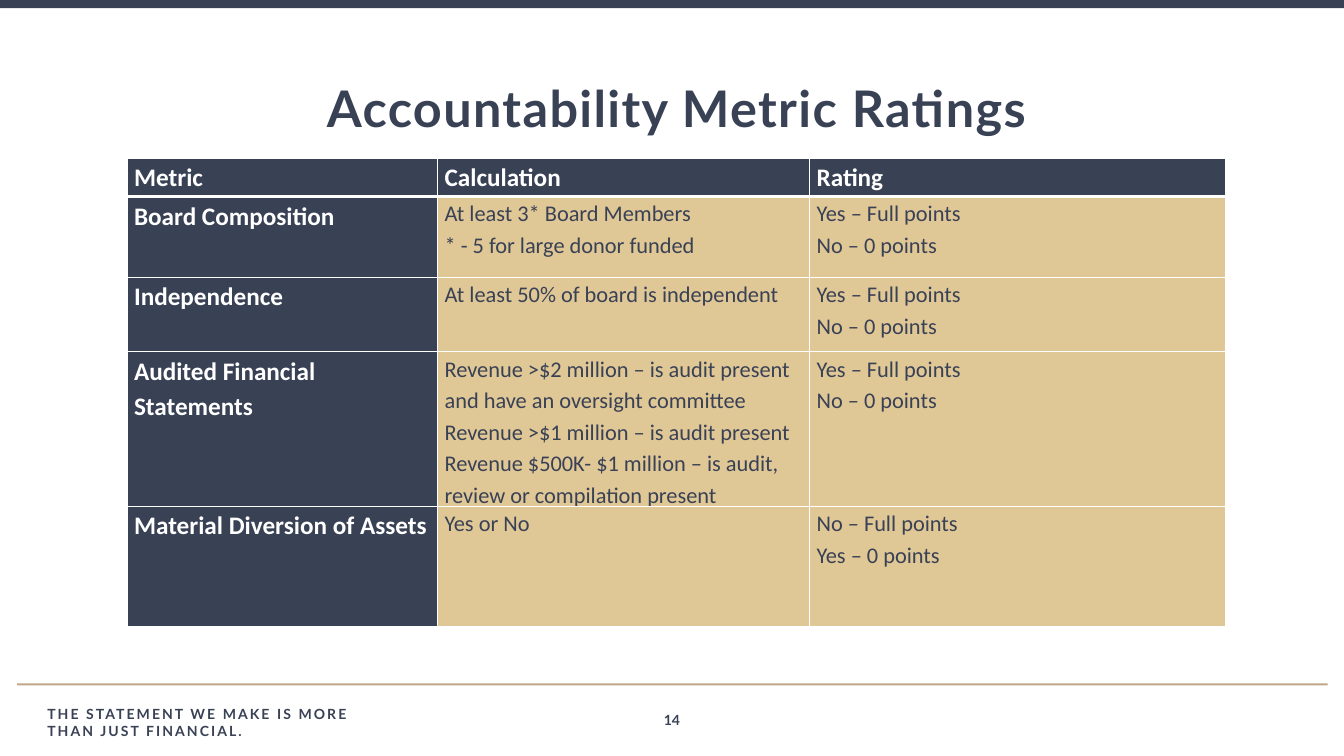
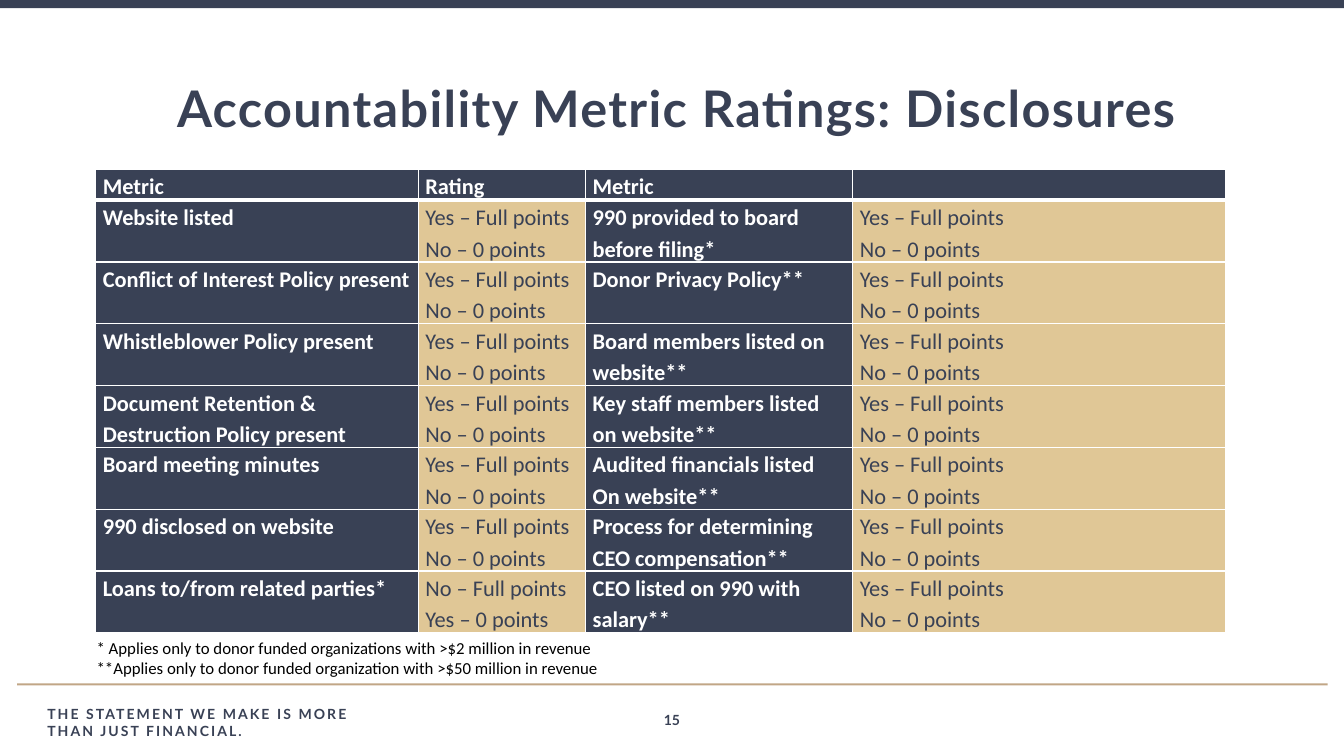
"""Build two slides on accountability metric ratings."""
from pptx import Presentation
from pptx.dml.color import RGBColor
from pptx.enum.shapes import MSO_SHAPE
from pptx.enum.text import MSO_ANCHOR, PP_ALIGN
from pptx.oxml.ns import qn
from pptx.util import Inches, Pt
from lxml.etree import SubElement

NAVY = RGBColor(0x39, 0x41, 0x55)
SAND = RGBColor(0xE0, 0xC7, 0x96)
TAN = RGBColor(0xC1, 0xA6, 0x86)
WHITE = RGBColor(0xFF, 0xFF, 0xFF)
BLACK = RGBColor(0, 0, 0)
HEAD_FONT, BODY_FONT = "Lato", "Calibri"
SLIDE_W, SLIDE_H = Inches(13.33), Inches(7.5)

FOOTER = "THE STATEMENT WE MAKE IS MORE\nTHAN JUST FINANCIAL."
YES_FULL = "Yes – Full points\nNo – 0 points"
NO_FULL = "No – Full points\nYes – 0 points"

RATINGS = [
    ("Metric", "Calculation", "Rating"),
    ("Board Composition",
     "At least 3* Board Members\n* - 5 for large donor funded", YES_FULL),
    ("Independence", "At least 50% of board is independent", YES_FULL),
    ("Audited Financial Statements",
     "Revenue >$2 million – is audit present and have an oversight committee\n"
     "Revenue >$1 million – is audit present\n"
     "Revenue $500K- $1 million – is audit, review or compilation present",
     YES_FULL),
    ("Material Diversion of Assets", "Yes or No", NO_FULL),
]
DISCLOSURES = [
    ("Metric", "Rating", "Metric", ""),
    ("Website listed", YES_FULL, "990 provided to board before filing*", YES_FULL),
    ("Conflict of Interest Policy present", YES_FULL,
     "Donor Privacy Policy**", YES_FULL),
    ("Whistleblower Policy present", YES_FULL,
     "Board members listed on website**", YES_FULL),
    ("Document Retention & Destruction Policy present", YES_FULL,
     "Key staff members listed on website**", YES_FULL),
    ("Board meeting minutes", YES_FULL,
     "Audited financials listed On website**", YES_FULL),
    ("990 disclosed on website", YES_FULL,
     "Process for determining CEO compensation**", YES_FULL),
    ("Loans to/from related parties*", NO_FULL,
     "CEO listed on 990 with salary**", YES_FULL),
]
FOOTNOTES = ("* Applies only to donor funded organizations with >$2 million in revenue\n"
             "**Applies only to donor funded organization with >$50 million in revenue")


def across(percent):
    """Return a percentage of the slide width."""
    return round(SLIDE_W * percent / 100)


def down(percent):
    """Return a percentage of the slide height."""
    return round(SLIDE_H * percent / 100)


def box(left, top, width, height):
    """Turn percentages of the slide into a frame."""
    return across(left), down(top), across(width), down(height)


def write(tf, text, size, color, font, bold=True, align=None, line=None, track=0):
    """Fill a text frame and format every run alike."""
    tf.text = text
    for p in tf.paragraphs:
        p.alignment = align
        p.line_spacing = line
        for r in p.runs:
            r.font.size, r.font.bold, r.font.name = Pt(size), bold, font
            r.font.color.rgb = color
            if track:
                r.font._element.set("spc", str(round(track * 100)))
        if not p.runs:
            p._p.get_or_add_endParaRPr().set("sz", str(size * 100))


def add_band(slide, frame, color):
    """Add a plain filled bar."""
    sp = slide.shapes.add_shape(MSO_SHAPE.RECTANGLE, *box(*frame))
    sp.shadow.inherit = False
    sp.fill.solid()
    sp.fill.fore_color.rgb = color
    sp.line.fill.background()


def add_text(slide, frame, text, size, color=NAVY, font=HEAD_FONT, wrap=True, **style):
    """Add a text box."""
    tf = slide.shapes.add_textbox(*box(*frame)).text_frame
    tf.word_wrap = wrap
    write(tf, text, size, color, font, **style)


def set_borders(cell, top, bottom):
    """Draw white cell borders with the given top and bottom widths."""
    tc_pr = cell._tc.get_or_add_tcPr()
    for side, width in zip("LRTB", (1, 1, top, bottom)):
        ln = SubElement(tc_pr, qn(f"a:ln{side}"), w=str(Pt(width)))
        fill = SubElement(ln, qn("a:solidFill"))
        SubElement(fill, qn("a:srgbClr"), val=str(WHITE))


def add_grid(slide, left, top, cols, heights, rows, metric_cols, metric_size):
    """Add a table with a dark header and dark metric columns."""
    frame = box(left, top, sum(cols), sum(heights))
    table = slide.shapes.add_table(len(rows), len(cols), *frame).table
    for column, width in zip(table.columns, cols):
        column.width = across(width)
    for i, (row, height) in enumerate(zip(rows, heights)):
        table.rows[i].height = down(height)
        for j, text in enumerate(row):
            cell = table.cell(i, j)
            dark = i == 0 or j in metric_cols
            cell.margin_left = cell.margin_right = Inches(0.07)
            cell.margin_top = cell.margin_bottom = 0
            cell.vertical_anchor = MSO_ANCHOR.TOP
            set_borders(cell, 3 if i == 1 else 1, 3 if i == 0 else 1)
            cell.fill.solid()
            cell.fill.fore_color.rgb = NAVY if dark else SAND
            write(cell.text_frame, text, metric_size if dark else 16,
                  WHITE if dark else NAVY, BODY_FONT, bold=dark, line=1.15)


def add_page(prs, title, number):
    """Add a slide with the shared bands, footer and title."""
    slide = prs.slides.add_slide(prs.slide_layouts[6])
    add_band(slide, (0, 0, 100, 1.07), NAVY)
    add_band(slide, (1.28, 90.4, 97.5, 0.27), TAN)
    add_text(slide, (2.78, 92.67, 41.79, 5.33), FOOTER, 10, track=1.5)
    add_text(slide, (47.71, 93.47, 4.58, 3.87), str(number), 10, align=PP_ALIGN.CENTER)
    add_text(slide, (3.75, 9.6, 93.25, 9.47), title, 36, align=PP_ALIGN.CENTER, track=1)
    return slide


def main():
    """Build and save the presentation."""
    prs = Presentation()
    prs.slide_width, prs.slide_height = SLIDE_W, SLIDE_H

    slide = add_page(prs, "Accountability Metric Ratings", 14)
    add_grid(slide, 9.45, 20.93, (23.11, 27.68, 30.98),
             (5.07, 10.67, 9.87, 15.87, 15.87), RATINGS, {0}, 18)

    slide = add_page(prs, "Accountability Metric Ratings: Disclosures", 15)
    add_grid(slide, 7.13, 22.4, (24, 12.45, 19.88, 27.76),
             [3.87] + [7.87] * 7, DISCLOSURES, {0, 2}, 16)
    add_text(slide, (6.45, 83.73, 39.23, 6.67), FOOTNOTES, 12, BLACK, BODY_FONT,
             wrap=False, bold=False)

    prs.save("out.pptx")


if __name__ == "__main__":
    main()
